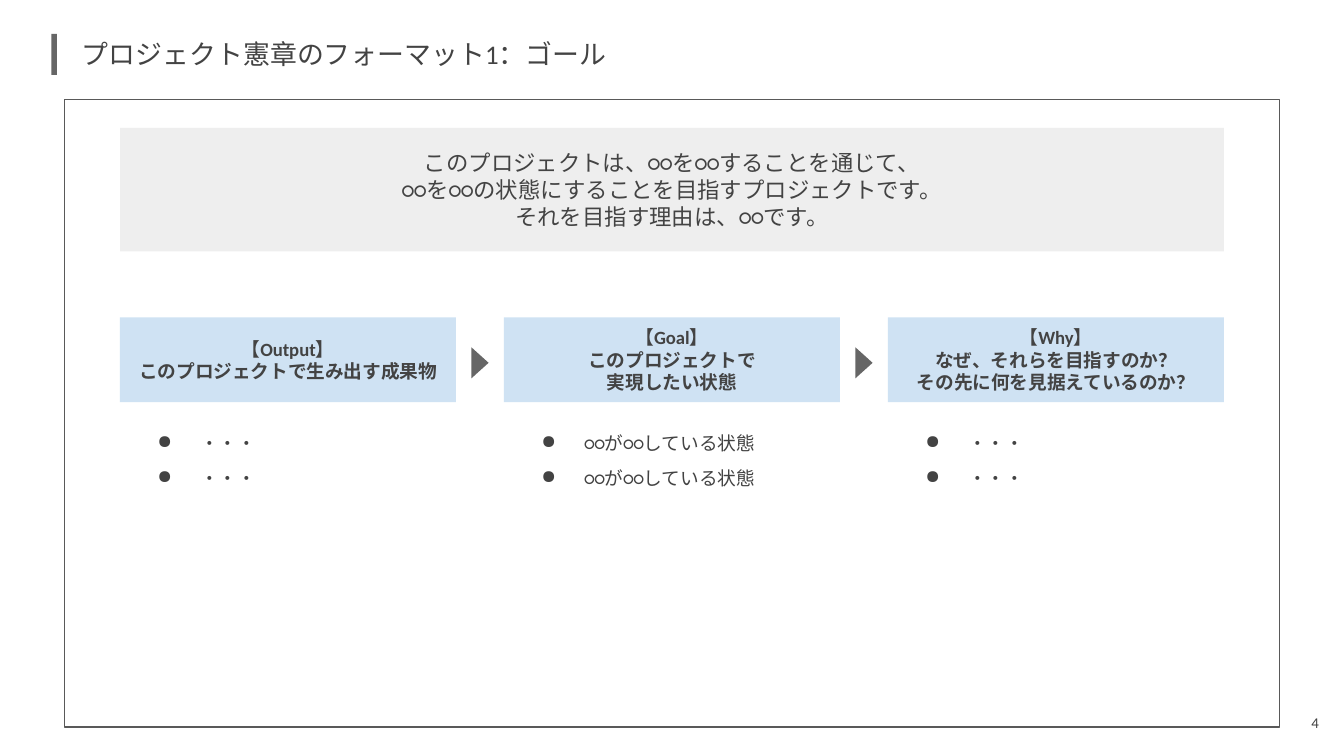
from lxml import etree
from pptx import Presentation
from pptx.dml.color import RGBColor
from pptx.enum.shapes import MSO_SHAPE
from pptx.enum.text import MSO_ANCHOR, PP_ALIGN
from pptx.oxml.ns import qn
from pptx.util import Pt

RECTANGLE, TRIANGLE = MSO_SHAPE.RECTANGLE, MSO_SHAPE.ISOSCELES_TRIANGLE
LEFT, CENTER, RIGHT = PP_ALIGN.LEFT, PP_ALIGN.CENTER, PP_ALIGN.RIGHT
TOP, MIDDLE = MSO_ANCHOR.TOP, MSO_ANCHOR.MIDDLE

TITLE = "プロジェクト憲章のフォーマット1：ゴール"
PAGE_NUMBER = "4"
SUMMARY = [
    "このプロジェクトは、○○を○○することを通じて、",
    "○○を○○の状態にすることを目指すプロジェクトです。",
    "それを目指す理由は、○○です。",
]
COLUMNS = [
    (["【Output】", "このプロジェクトで生み出す成果物"], ["・・・", "・・・"]),
    (["【Goal】", "このプロジェクトで", "実現したい状態"],
     ["○○が○○している状態", "○○が○○している状態"]),
    (["【Why】", "なぜ、それらを目指すのか？", "その先に何を見据えているのか？"],
     ["・・・", "・・・"]),
]

FONT = "Calibri"
TEXT, GRAY, FRAME = "434343", "666666", "595959"
PANEL, BLUE, WHITE = "EEEEEE", "CFE2F3", "FFFFFF"

CONTENT_LEFT, CONTENT_WIDTH = 64.3, 591.4
COLUMN_WIDTH = 180
COLUMN_GAP = (CONTENT_WIDTH - COLUMN_WIDTH * len(COLUMNS)) / (len(COLUMNS) - 1)
HEADER_TOP, HEADER_HEIGHT = 170, 45.5
BODY_TOP, BODY_HEIGHT = 222.5, 142.5
ARROW_WIDTH, ARROW_HEIGHT, ARROW_CENTER = 16.6, 9.2, 194.4


def color(value):
    """Turn a hex string into a colour."""
    return RGBColor.from_string(value)


def place(shape, left, top, width, height):
    """Set the position and size of a shape in points."""
    shape.left, shape.top = Pt(left), Pt(top)
    shape.width, shape.height = Pt(width), Pt(height)


def add_bullet(paragraph):
    """Give a paragraph a hanging round bullet."""
    properties = paragraph._p.get_or_add_pPr()
    properties.set("marL", str(Pt(36)))
    properties.set("indent", str(-Pt(23)))
    bullet_color = etree.SubElement(properties, qn("a:buClr"))
    etree.SubElement(bullet_color, qn("a:srgbClr"), val=TEXT)
    etree.SubElement(properties, qn("a:buChar"), char="●")


def write_text(shape, lines, size=10, bold=False, align=CENTER, anchor=MIDDLE, bullets=False):
    """Fill a shape with one formatted paragraph per line."""
    frame = shape.text_frame
    frame.word_wrap = True
    frame.vertical_anchor = anchor
    frame.margin_left = frame.margin_right = Pt(7.2)
    frame.margin_top = frame.margin_bottom = Pt(7.2)
    for index, line in enumerate(lines):
        paragraph = frame.add_paragraph() if index else frame.paragraphs[0]
        paragraph.alignment = align
        if bullets:
            paragraph.line_spacing = 1.15
            paragraph.space_before = paragraph.space_after = Pt(5 if index else 0)
            add_bullet(paragraph)
        run = paragraph.add_run()
        run.text = line
        run.font.size = Pt(size)
        run.font.bold = bold
        run.font.color.rgb = color(TEXT)
        run.font.name = FONT
        etree.SubElement(run.font._element, qn("a:ea"), typeface=FONT)


def add_box(slide, left, top, width, height, fill=None, line=None, kind=RECTANGLE):
    """Add a flat shape with an optional fill and outline."""
    shape = slide.shapes.add_shape(kind, Pt(left), Pt(top), Pt(width), Pt(height))
    shape.shadow.inherit = False
    if fill:
        shape.fill.solid()
        shape.fill.fore_color.rgb = color(fill)
    else:
        shape.fill.background()
    if line:
        shape.line.color.rgb = color(line)
        shape.line.width = Pt(0.75)
    else:
        shape.line.fill.background()
    return shape


def add_column(slide, index, heading, items):
    """Add a heading box, its bullet list and the arrow leading to it."""
    left = CONTENT_LEFT + index * (COLUMN_WIDTH + COLUMN_GAP)
    header = add_box(slide, left, HEADER_TOP, COLUMN_WIDTH, HEADER_HEIGHT, fill=BLUE)
    write_text(header, heading, bold=True)
    body = add_box(slide, left, BODY_TOP, COLUMN_WIDTH, BODY_HEIGHT, fill=WHITE)
    write_text(body, items, align=LEFT, anchor=TOP, bullets=True)
    if index:
        arrow = add_box(slide, left - (COLUMN_GAP + ARROW_WIDTH) / 2,
                        ARROW_CENTER - ARROW_HEIGHT / 2,
                        ARROW_WIDTH, ARROW_HEIGHT, fill=GRAY, kind=TRIANGLE)
        arrow.rotation = 90


def main():
    """Build the project charter goal slide."""
    presentation = Presentation()
    presentation.slide_width, presentation.slide_height = Pt(720), Pt(405)
    slide = presentation.slides.add_slide(presentation.slide_layouts[5])

    title = slide.shapes.title
    place(title, 36.7, 12.5, 669.6, 33)
    write_text(title, [TITLE], size=14.4, align=LEFT)
    add_box(slide, 27.5, 18.2, 3, 22, fill=GRAY)
    add_box(slide, 34.6, 53.2, 650.8, 336.3, line=FRAME)

    summary = add_box(slide, CONTENT_LEFT, 68.5, CONTENT_WIDTH, 66.2, fill=PANEL)
    write_text(summary, SUMMARY, size=12)
    for index, (heading, items) in enumerate(COLUMNS):
        add_column(slide, index, heading, items)

    number = slide.shapes.add_textbox(Pt(673.4), Pt(374.6), Pt(40.3), Pt(24.5))
    write_text(number, [PAGE_NUMBER], size=8, align=RIGHT)
    presentation.save("out.pptx")


if __name__ == "__main__":
    main()
